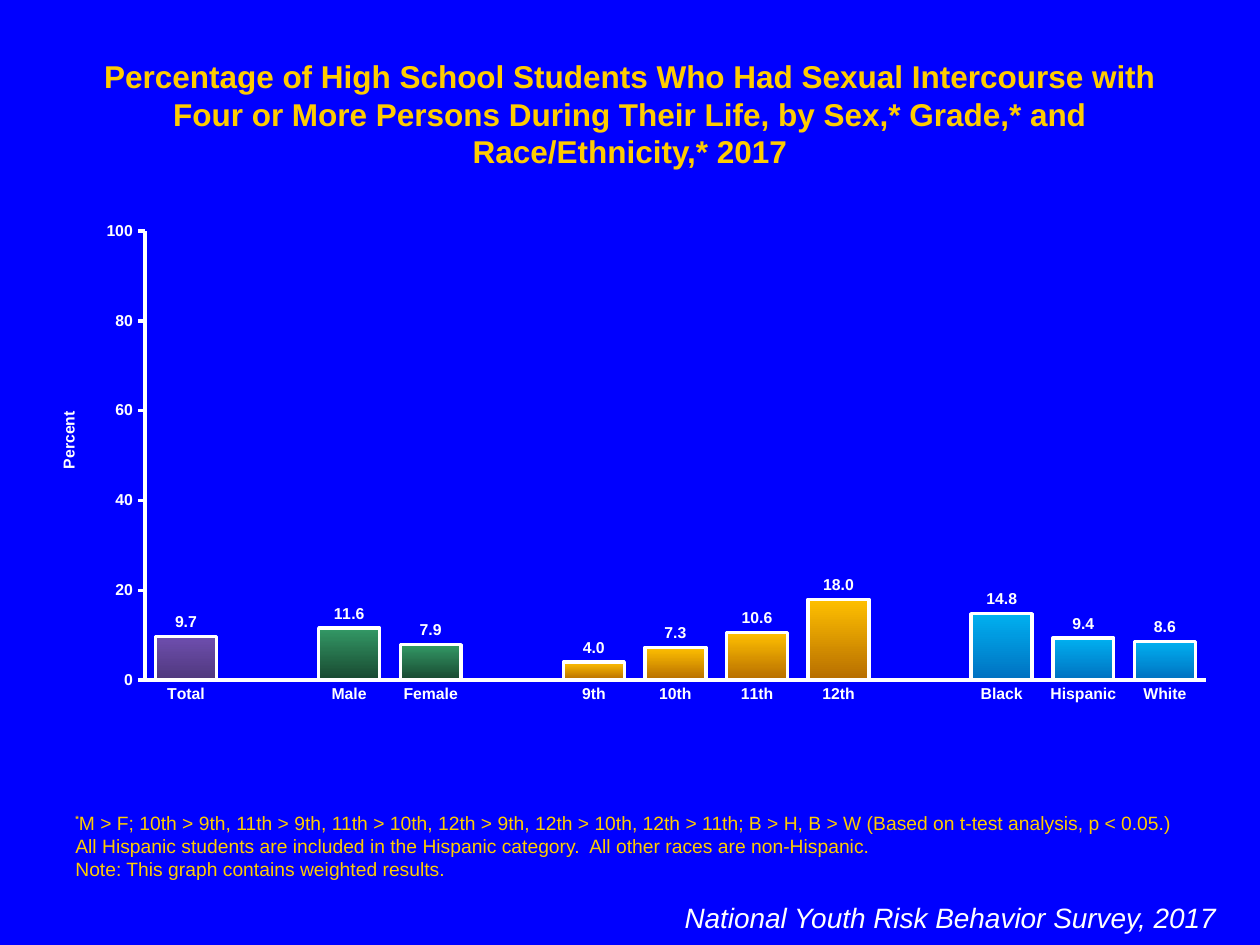
from dataclasses import dataclass
from lxml.etree import SubElement
from pptx import Presentation
from pptx.chart.data import CategoryChartData
from pptx.dml.color import RGBColor
from pptx.enum.chart import XL_CHART_TYPE, XL_LABEL_POSITION, XL_TICK_MARK
from pptx.enum.text import MSO_ANCHOR, MSO_AUTO_SIZE, PP_ALIGN
from pptx.oxml.ns import qn
from pptx.util import Inches, Pt

# Content
TITLE = ("Percentage of High School Students Who Had Sexual Intercourse with "
         "Four or More Persons During Their Life, by Sex,* Grade,* and "
         "Race/Ethnicity,* 2017")
FOOTNOTES = [
    "M > F; 10th > 9th, 11th > 9th, 11th > 10th, 12th > 9th, 12th > 10th, "
    "12th > 11th; B > H, B > W (Based on t-test analysis, p < 0.05.)",
    "All Hispanic students are included in the Hispanic category.  "
    "All other races are non-Hispanic.",
    "Note: This graph contains weighted results.",
]
SURVEY = "National Youth Risk Behavior Survey, 2017"
# Each group: gradient from top to bottom, then its bars
GROUPS = [
    (("6E4EAE", "4F387C"), [("Total", 9.7)]),
    (("339966", "18472F"), [("Male", 11.6), ("Female", 7.9)]),
    (("FFC000", "B66D00"), [("9th", 4.0), ("10th", 7.3), ("11th", 10.6), ("12th", 18.0)]),
    (("00B0F0", "0070C0"), [("Black", 14.8), ("Hispanic", 9.4), ("White", 8.6)]),
]


@dataclass(frozen=True)
class Theme:
    font: str = "Arial"
    background: str = "0000FF"
    accent: str = "FFCC00"
    light: str = "FFFFFF"
    title: int = 18
    survey: int = 16
    note: int = 11
    mark: int = 9
    chart: int = 9
    line: int = 2


THEME = Theme()
WIDTH, HEIGHT = Inches(10), Inches(7.5)
# Left, top, width and height in inches
TITLE_AREA = (0.5, 0.4, 9, 1)
CHART_AREA = (0.25, 1.69, 9.5, 3.98)
NOTE_AREA = (0.5, 6.2, 9, 0.84)
SURVEY_AREA = (4.25, 7.1, 5.5, 0.37)
# Shares of the chart's size
PLOT_SHARE = {"x": 0.095, "y": 0.036, "w": 0.886, "h": 0.896}
AXIS_TITLE_SHARE = {"x": 0.02, "y": 0.39}


def style_font(font, size, color, bold=False, italic=False):
    font.name, font.size = THEME.font, Pt(size)
    font.bold, font.italic = bold, italic
    font.color.rgb = RGBColor.from_string(color)


def place(shape, area):
    shape.left, shape.top, shape.width, shape.height = map(Inches, area)


def prepare_frame(shape, anchor):
    frame = shape.text_frame
    frame.word_wrap, frame.auto_size = True, MSO_AUTO_SIZE.NONE
    frame.vertical_anchor = anchor
    return frame


def add_text(slide, area, lines, anchor=MSO_ANCHOR.TOP):
    box = slide.shapes.add_textbox(*map(Inches, area))
    frame = prepare_frame(box, anchor)
    frame.text = "\n".join(lines)
    return frame


def set_layout(parent, shares, inner=False):
    """Place a chart part by shares of the chart's size."""
    layout = parent.find(qn("c:layout"))
    if layout is None:
        layout = SubElement(parent, qn("c:layout"))
        anchor = parent.find(qn("c:tx"))
        if anchor is not None:
            anchor.addnext(layout)
        else:
            parent.insert(0, layout)
    manual = SubElement(layout, qn("c:manualLayout"))
    if inner:
        SubElement(manual, qn("c:layoutTarget")).set("val", "inner")
    for key in "xy":
        SubElement(manual, qn(f"c:{key}Mode")).set("val", "edge")
    for key, share in shares.items():
        SubElement(manual, qn(f"c:{key}")).set("val", str(share))


def style_line(line):
    line.color.rgb = RGBColor.from_string(THEME.light)
    line.width = Pt(THEME.line)


def style_axis(axis, tick):
    axis.major_tick_mark, axis.minor_tick_mark = tick, XL_TICK_MARK.NONE
    axis.has_major_gridlines = False
    style_line(axis.format.line)
    style_font(axis.tick_labels.font, THEME.chart, THEME.light, bold=True)


def add_bars(slide):
    # An empty category separates neighbouring groups
    bars = []
    for gradient, members in GROUPS:
        if bars:
            bars.append(("", None, None))
        bars += [(name, value, gradient) for name, value in members]

    data = CategoryChartData(number_format="#,##0.0")
    data.categories = [name for name, _, _ in bars]
    data.add_series("Series 1", [value for _, value, _ in bars])
    chart = slide.shapes.add_chart(
        XL_CHART_TYPE.COLUMN_CLUSTERED, *map(Inches, CHART_AREA), data).chart
    chart.has_legend = chart.has_title = False
    style_font(chart.font, THEME.chart, THEME.light)

    # Axes
    style_axis(chart.category_axis, XL_TICK_MARK.NONE)
    axis = chart.value_axis
    style_axis(axis, XL_TICK_MARK.OUTSIDE)
    axis.minimum_scale, axis.maximum_scale, axis.major_unit = 0, 100, 20
    axis.tick_labels.number_format = "General"
    axis.tick_labels.number_format_is_linked = False
    heading = axis.axis_title.text_frame
    heading.text = "Percent"
    style_font(heading.paragraphs[0].runs[0].font, THEME.chart, THEME.light, bold=True)
    set_layout(axis.axis_title._element, AXIS_TITLE_SHARE)
    set_layout(chart._chartSpace.chart.plotArea, PLOT_SHARE, inner=True)

    # Bars and their values
    plot = chart.plots[0]
    plot.gap_width, plot.overlap, plot.vary_by_categories = 34, 100, False
    plot.has_data_labels = True
    labels = plot.data_labels
    labels.show_value, labels.position = True, XL_LABEL_POSITION.OUTSIDE_END
    labels.number_format, labels.number_format_is_linked = "#,##0.0", False
    style_font(labels.font, THEME.chart, THEME.light, bold=True)
    for index, (_, _, gradient) in enumerate(bars):
        if gradient:
            look = plot.series[0].points[index].format
            look.fill.gradient()
            look.fill.gradient_angle = 270
            for stop, color in zip(look.fill.gradient_stops, gradient):
                stop.color.rgb = RGBColor.from_string(color)
            style_line(look.line)


def main():
    deck = Presentation()
    deck.slide_width, deck.slide_height = WIDTH, HEIGHT
    slide = deck.slides.add_slide(deck.slide_layouts.get_by_name("Title Only"))
    slide.background.fill.solid()
    slide.background.fill.fore_color.rgb = RGBColor.from_string(THEME.background)

    # Title
    title = slide.shapes.title
    place(title, TITLE_AREA)
    frame = prepare_frame(title, MSO_ANCHOR.TOP)
    frame.text = TITLE
    frame.paragraphs[0].alignment = PP_ALIGN.CENTER
    style_font(frame.paragraphs[0].runs[0].font, THEME.title, THEME.accent, bold=True)

    add_bars(slide)

    # Footnotes, the first led by a raised asterisk
    notes = add_text(slide, NOTE_AREA, ["*"] + FOOTNOTES[1:], MSO_ANCHOR.BOTTOM)
    notes.paragraphs[0].add_run().text = FOOTNOTES[0]
    for para in notes.paragraphs:
        for span in para.runs:
            style_font(span.font, THEME.note, THEME.accent)
    mark = notes.paragraphs[0].runs[0].font
    style_font(mark, THEME.mark, THEME.accent, bold=True)
    mark._element.set("baseline", "50000")

    # Survey name
    para = add_text(slide, SURVEY_AREA, [SURVEY]).paragraphs[0]
    para.alignment = PP_ALIGN.RIGHT
    style_font(para.runs[0].font, THEME.survey, THEME.light, italic=True)

    deck.save("out.pptx")


if __name__ == "__main__":
    main()
